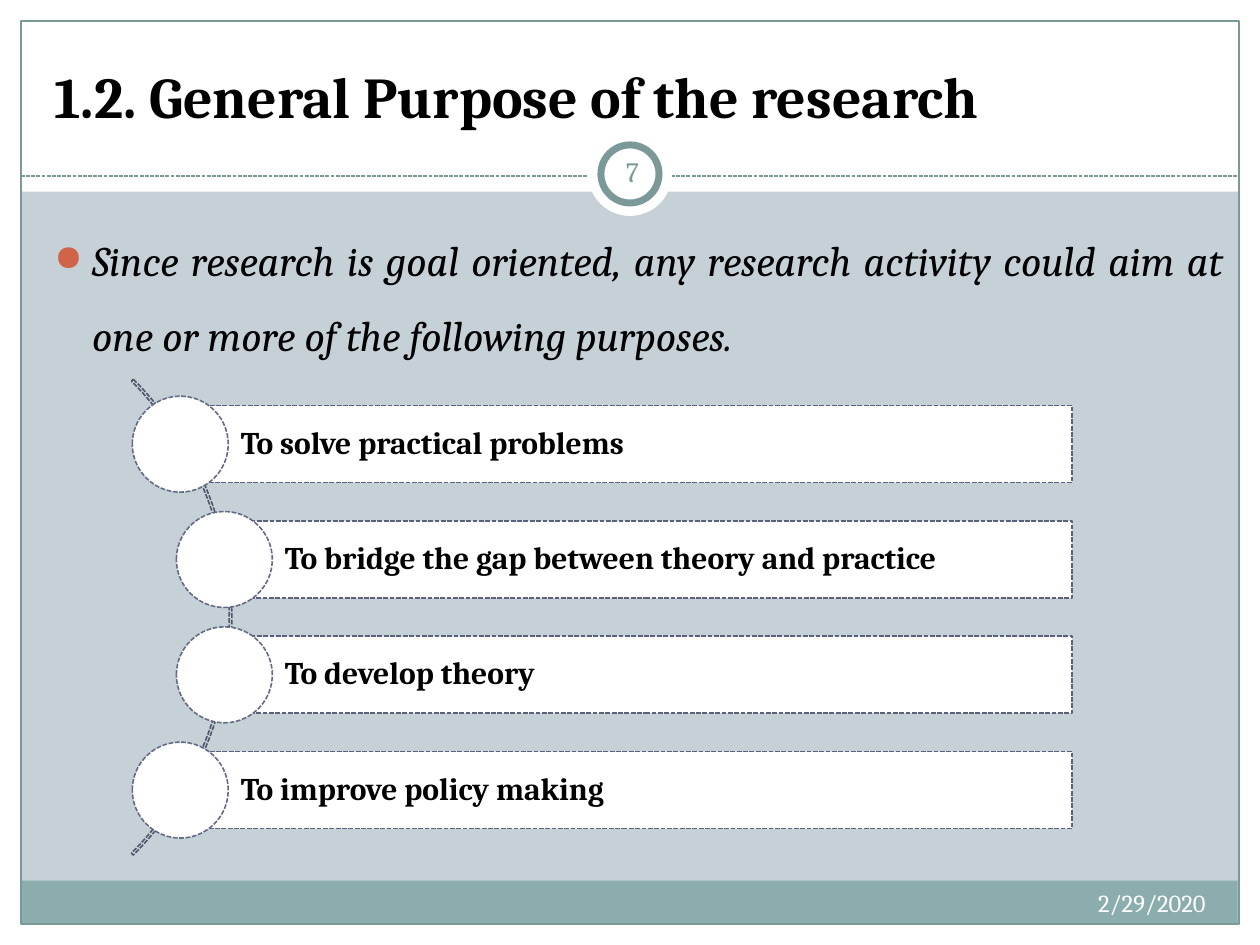
"""Build the slide on the general purpose of research."""
from dataclasses import dataclass
from typing import Optional

from lxml.etree import SubElement
from pptx import Presentation
from pptx.dml.color import RGBColor
from pptx.enum.dml import MSO_LINE
from pptx.enum.shapes import MSO_CONNECTOR, MSO_SHAPE as Preset
from pptx.enum.text import MSO_ANCHOR as Anchor, PP_ALIGN as Align
from pptx.oxml.ns import qn
from pptx.shapes.autoshape import Shape
from pptx.slide import Slide
from pptx.text.text import TextFrame
from pptx.util import Pt

COLORS = {
    "backdrop": "C5D1D7", "white": "FFFFFF", "black": "000000",
    "band": "8CADAE", "frame": "7C999A", "bullet": "D16349",
    "arc": "50566B", "bar": "5B617A", "node": "646B86",
}
FONT = "Cambria"
FIRST_CENTER, ROW_PITCH = 253.8, 65.9
BAR_RIGHT, BAR_HEIGHT, NODE_SIZE = 612.7, 44, 54.8


@dataclass(frozen=True)
class Box:
    left: float
    top: float
    width: float
    height: float

    def lengths(self) -> tuple:
        return tuple(Pt(v) for v in (self.left, self.top, self.width, self.height))


@dataclass(frozen=True)
class Part:
    box: Box
    preset: Preset = Preset.RECTANGLE
    fill: Optional[str] = "white"
    line: Optional[str] = None
    weight: float = 0.75
    dashed: bool = False


@dataclass(frozen=True)
class Wording:
    text: str
    size: float
    color: str = "black"
    bold: bool = False
    italic: bool = False
    align: Align = Align.LEFT
    anchor: Anchor = Anchor.TOP
    insets: tuple = (7.2, 3.6, 7.2, 3.6)
    spacing: float = 1.0


@dataclass(frozen=True)
class Purpose:
    text: str
    left: float


FRAME_PARTS = [
    Part(Box(0, 528, 720, 12)),
    Part(Box(0, 0, 720, 109.6)),
    Part(Box(0, 0, 12, 540)),
    Part(Box(708, 0, 12, 540)),
    Part(Box(11.7, 503.3, 695.5, 24.5), fill="band"),
    Part(Box(12, 12, 696, 516), fill=None, line="frame"),
]
BADGE_PARTS = [
    Part(Box(336, 75.4, 48, 48), Preset.OVAL),
    Part(Box(343.4, 82.8, 33.2, 33.2), Preset.OVAL, line="frame", weight=4),
]
LABELS = [
    (Box(24, 18, 672, 60), Wording("1.2. General Purpose of the research", 33,
                                   bold=True, anchor=Anchor.BOTTOM)),
    (Box(456, 504, 240, 28.8), Wording("2/29/2020", 14, "white", align=Align.RIGHT)),
    (Box(343.4, 80.6, 36, 34.6), Wording("7", 16, "frame", align=Align.CENTER,
                                         anchor=Anchor.MIDDLE, insets=(3.6,) * 4)),
]
INTRO = Wording("Since research is goal oriented, any research activity could aim at "
                "one or more of the following purposes.", 24, italic=True,
                align=Align.JUSTIFY, spacing=1.5)
PURPOSES = [
    Purpose("To solve practical problems", 103),
    Purpose("To bridge the gap between theory and practice", 128.2),
    Purpose("To develop theory", 128.2),
    Purpose("To improve policy making", 103),
]


def rgb(name: str) -> RGBColor:
    return RGBColor.from_string(COLORS[name])


def draw_part(slide: Slide, part: Part) -> Shape:
    shape = slide.shapes.add_shape(part.preset, *part.box.lengths())
    shape.shadow.inherit = False
    if part.fill:
        shape.fill.solid()
        shape.fill.fore_color.rgb = rgb(part.fill)
    else:
        shape.fill.background()
    if part.line:
        shape.line.color.rgb = rgb(part.line)
        shape.line.width = Pt(part.weight)
        if part.dashed:
            shape.line.dash_style = MSO_LINE.SQUARE_DOT
    else:
        shape.line.fill.background()
    return shape


def write(frame: TextFrame, wording: Wording) -> None:
    frame.word_wrap = True
    frame.vertical_anchor = wording.anchor
    (frame.margin_left, frame.margin_top,
     frame.margin_right, frame.margin_bottom) = map(Pt, wording.insets)
    paragraph = frame.paragraphs[0]
    paragraph.alignment = wording.align
    paragraph.line_spacing = wording.spacing
    run = paragraph.add_run()
    run.text = wording.text
    run.font.name = FONT
    run.font.size = Pt(wording.size)
    run.font.bold = wording.bold
    run.font.italic = wording.italic
    run.font.color.rgb = rgb(wording.color)


def add_label(slide: Slide, box: Box, wording: Wording) -> TextFrame:
    frame = slide.shapes.add_textbox(*box.lengths()).text_frame
    write(frame, wording)
    return frame


def draw_intro(slide: Slide) -> None:
    paragraph = add_label(slide, Box(24, 116, 682, 409.6), INTRO).paragraphs[0]
    paragraph.space_before = Pt(4.8)
    properties = paragraph._p.get_or_add_pPr()
    properties.set("marL", str(Pt(21.6)))
    properties.set("indent", str(-Pt(21.6)))
    bullet_color = SubElement(properties, qn("a:buClr"))
    SubElement(bullet_color, qn("a:srgbClr"), val=COLORS["bullet"])
    SubElement(properties, qn("a:buSzPct"), val="85000")
    SubElement(properties, qn("a:buChar"), char="●")


def draw_divider(slide: Slide) -> None:
    divider = slide.shapes.add_connector(
        MSO_CONNECTOR.STRAIGHT, Pt(12), Pt(100.6), Pt(708), Pt(100.6))
    divider.line.color.rgb = rgb("frame")
    divider.line.width = Pt(0.75)
    divider.line.dash_style = MSO_LINE.SQUARE_DOT
    SubElement(divider._element.spPr, qn("a:effectLst"))


def draw_purpose(slide: Slide, purpose: Purpose, center: float) -> None:
    bar_box = Box(purpose.left, center - BAR_HEIGHT / 2,
                  BAR_RIGHT - purpose.left, BAR_HEIGHT)
    bar = draw_part(slide, Part(bar_box, line="bar", weight=0.9, dashed=True))
    write(bar.text_frame, Wording(purpose.text, 18, bold=True, anchor=Anchor.MIDDLE,
                                  insets=(34.6, 3.6, 3.6, 3.6), spacing=0.9))
    node_box = Box(purpose.left - NODE_SIZE / 2, center - NODE_SIZE / 2,
                   NODE_SIZE, NODE_SIZE)
    draw_part(slide, Part(node_box, Preset.OVAL, line="node", weight=0.9, dashed=True))


def main() -> None:
    deck = Presentation()
    deck.slide_width, deck.slide_height = Pt(720), Pt(540)
    slide = deck.slides.add_slide(deck.slide_layouts[6])
    slide.background.fill.solid()
    slide.background.fill.fore_color.rgb = rgb("backdrop")
    for part in FRAME_PARTS:
        draw_part(slide, part)
    draw_divider(slide)
    for part in BADGE_PARTS:
        draw_part(slide, part)
    for box, wording in LABELS:
        add_label(slide, box, wording)
    draw_intro(slide)
    arc = draw_part(slide, Part(Box(-252, 160.4, 384.5, 384.5), Preset.BLOCK_ARC,
                                fill=None, line="arc", weight=0.9, dashed=True))
    for index, value in enumerate((189, 27, 0.004)):
        arc.adjustments[index] = value
    for row, purpose in enumerate(PURPOSES):
        draw_purpose(slide, purpose, FIRST_CENTER + row * ROW_PITCH)
    deck.save("out.pptx")


if __name__ == "__main__":
    main()
